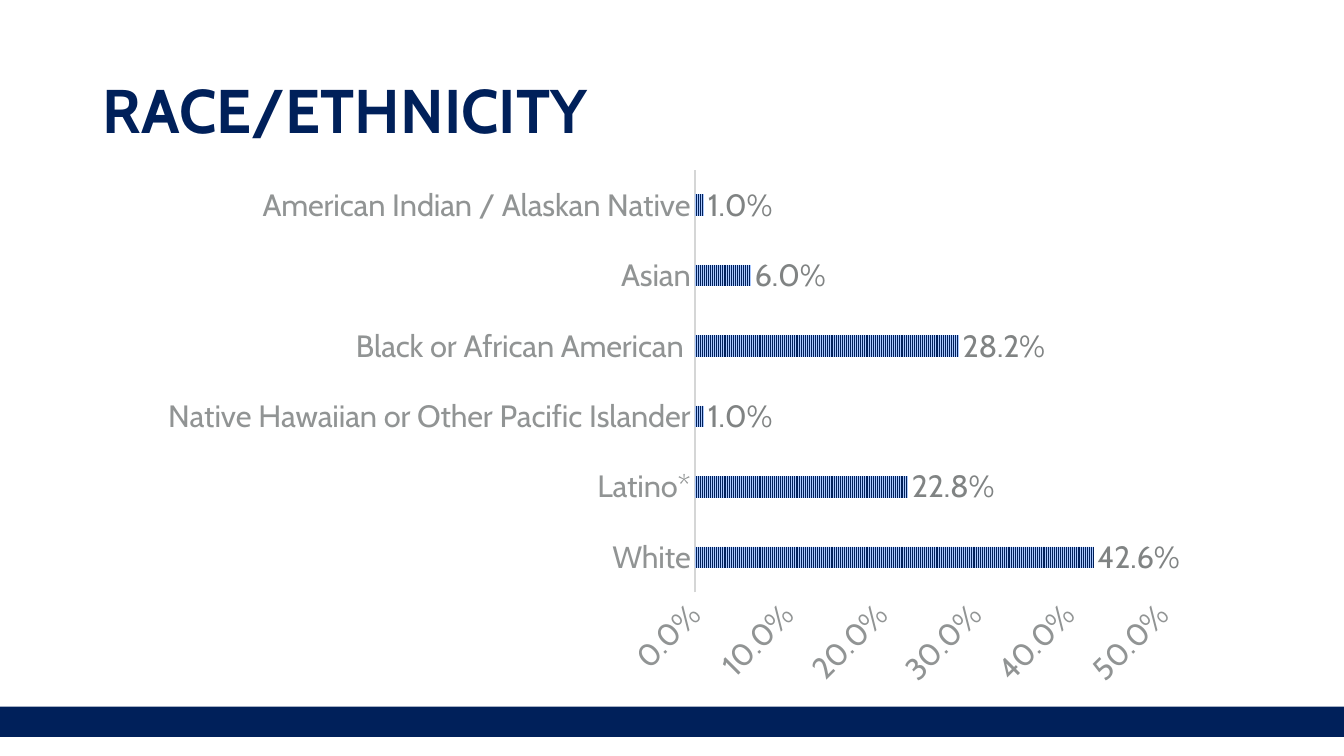
from dataclasses import dataclass

from pptx import Presentation
from pptx.chart import data as chart_data
from pptx.dml.color import RGBColor
from pptx.enum import chart as chart_enum, dml, shapes, text
from pptx.oxml import ns
from pptx.util import Inches, Pt


@dataclass(frozen=True)
class Theme:
    font: str = "Cabin"
    navy: str = "00205A"
    pale_blue: str = "ABC9FF"
    axis_text: str = "919494"
    axis_line: str = "D5D6D6"
    label_text: str = "808383"
    chart_text: str = "575959"
    title_size: int = 44
    chart_size: int = 22


THEME = Theme()
PERCENT = "0.0%"
SHARES = {
    "White": 0.426,
    "Latino*": 0.228,
    "Native Hawaiian or Other Pacific Islander": 0.01,
    "Black or African American ": 0.282,
    "Asian": 0.06,
    "American Indian / Alaskan Native": 0.01,
}


def color(value):
    return RGBColor.from_string(value)


def style_font(font, size, value, bold=False):
    font.name = THEME.font
    font.size = Pt(size)
    font.bold = bold
    font.color.rgb = color(value)


def add_footer_band(slide):
    band = slide.shapes.add_shape(
        shapes.MSO_SHAPE.RECTANGLE, 0, Inches(7.01), Inches(13.33), Inches(0.3)
    )
    band.shadow.inherit = False
    band.fill.solid()
    band.fill.fore_color.rgb = color(THEME.navy)
    band.line.fill.background()


def set_title(slide, wording):
    title = slide.shapes.title
    title.left, title.top = Inches(0.92), Inches(0.4)
    title.width, title.height = Inches(11.5), Inches(1.45)
    frame = title.text_frame
    frame.text = wording
    frame.word_wrap = True
    frame.vertical_anchor = text.MSO_ANCHOR.MIDDLE
    paragraph = frame.paragraphs[0]
    paragraph.alignment = text.PP_ALIGN.LEFT
    paragraph.line_spacing = 0.9
    style_font(paragraph.runs[0].font, THEME.title_size, THEME.navy, bold=True)


def style_axis(axis):
    axis.has_major_gridlines = False
    axis.major_tick_mark = chart_enum.XL_TICK_MARK.NONE
    axis.minor_tick_mark = chart_enum.XL_TICK_MARK.NONE
    style_font(axis.tick_labels.font, THEME.chart_size, THEME.axis_text)


def style_value_axis(axis):
    style_axis(axis)
    axis.minimum_scale, axis.maximum_scale, axis.major_unit = 0, 0.5, 0.1
    axis.tick_labels.number_format = PERCENT
    axis.tick_labels.number_format_is_linked = False
    axis.format.line.fill.background()
    body = axis._element.find(ns.qn("c:txPr")).find(ns.qn("a:bodyPr"))
    body.set("rot", str(-45 * 60000))
    body.set("vert", "horz")


def style_category_axis(axis):
    style_axis(axis)
    axis.format.line.color.rgb = color(THEME.axis_line)
    axis.format.line.width = Pt(1.5)


def style_bars(plot):
    plot.gap_width = 227
    plot.overlap = -48
    plot.vary_by_categories = False
    fill = plot.series[0].format.fill
    fill.patterned()
    fill.pattern = dml.MSO_PATTERN.NARROW_VERTICAL
    fill.fore_color.rgb = color(THEME.navy)
    fill.back_color.rgb = color(THEME.pale_blue)
    labels = plot.series[0].data_labels
    labels.show_value = True
    labels.position = chart_enum.XL_LABEL_POSITION.OUTSIDE_END
    labels.number_format = PERCENT
    labels.number_format_is_linked = False
    style_font(labels.font, THEME.chart_size, THEME.label_text)


def add_share_chart(slide, shares):
    values = chart_data.CategoryChartData(number_format=PERCENT)
    values.categories = list(shares)
    values.add_series("Series 1", list(shares.values()))
    chart = slide.shapes.add_chart(
        chart_enum.XL_CHART_TYPE.BAR_CLUSTERED,
        Inches(1.46), Inches(1.58), Inches(10.41), Inches(5.35), values,
    ).chart
    chart.has_title = False
    chart.has_legend = False
    style_font(chart.font, THEME.chart_size, THEME.chart_text)
    style_category_axis(chart.category_axis)
    style_value_axis(chart.value_axis)
    style_bars(chart.plots[0])


def main():
    presentation = Presentation()
    presentation.slide_width = Inches(13.33)
    presentation.slide_height = Inches(7.5)
    slide = presentation.slides.add_slide(presentation.slide_layouts[5])
    add_footer_band(slide)
    set_title(slide, "RACE/ETHNICITY")
    add_share_chart(slide, SHARES)
    presentation.save("out.pptx")


if __name__ == "__main__":
    main()
